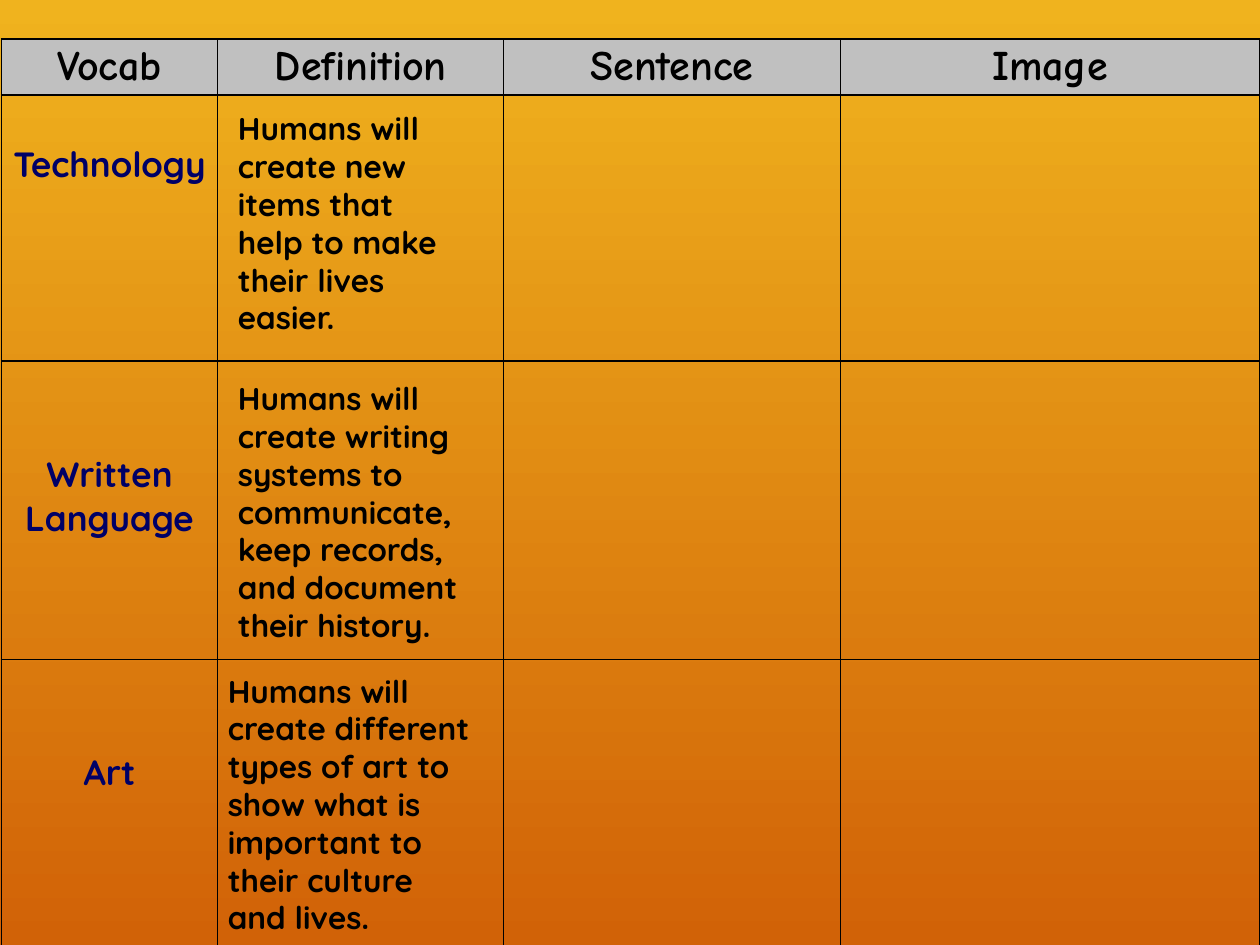
"""Build a vocabulary slide with a four-column table and three definitions."""
from dataclasses import dataclass

from lxml.etree import SubElement
from pptx import Presentation
from pptx.dml.color import RGBColor
from pptx.enum.text import MSO_AUTO_SIZE, PP_ALIGN
from pptx.oxml.ns import qn
from pptx.slide import Slide
from pptx.table import Table, _Cell
from pptx.text.text import _Paragraph
from pptx.util import Pt

COLORS = {
    "top": "F0B31E",
    "bottom": "D16207",
    "header": "C0C0C0",
    "ink": "000000",
    "term": "000066",
}
HEADER_FORMAT = {"name": "Comic Neue", "size": Pt(24), "bold": True}
TERM_FORMAT = {"name": "Quicksand", "size": Pt(20), "bold": True}
DEFINITION_FORMAT = {"name": "Quicksand", "size": Pt(18), "bold": True}

HEADINGS = ("Vocab", "Definition", "Sentence", "Image")
COLUMN_WIDTHS = (123.8, 163.4, 192.2, 239.8)
HEADER_HEIGHT = 31.7
CELL_MARGINS = {
    "margin_left": Pt(4.3),
    "margin_right": Pt(4.3),
    "margin_top": Pt(2.2),
    "margin_bottom": Pt(2.2),
}


@dataclass(frozen=True)
class Entry:
    """A vocabulary term, its row and the box of its definition."""

    term: str
    definition: str
    row_height: float
    term_drop: float
    left: float
    top: float
    width: float
    height: float


ENTRIES = (
    Entry("Technology",
          "Humans will create new items that help to make their lives easier.",
          152, 25, 128.9, 59, 141.8, 138.2),
    Entry("Written Language",
          "Humans will create writing systems to communicate, keep records, "
          "and document their history.",
          170.6, 50, 128.9, 213.1, 153.4, 159.8),
    Entry("Art",
          "Humans will create different types of art to show what is important "
          "to their culture and lives.",
          170.6, 50, 123.1, 380.2, 153.4, 159.8),
)


def color(name: str) -> RGBColor:
    """Return a named colour."""
    return RGBColor.from_string(COLORS[name])


def apply(target: object, values: dict) -> None:
    """Set each attribute of the target from the values."""
    for name, value in values.items():
        setattr(target, name, value)


def write(para: _Paragraph, text: str, values: dict, ink: str) -> None:
    """Add one formatted span of text to a paragraph."""
    span = para.add_run()
    span.text = text
    apply(span.font, values)
    span.font.color.rgb = color(ink)


def paint_background(page: Slide) -> None:
    """Fill the page with a gradient from top to bottom."""
    fill = page.background.fill
    fill.gradient()
    fill.gradient_angle = 270
    for stop, name, position in zip(fill.gradient_stops, ("top", "bottom"), (0, 1)):
        stop.color.rgb = color(name)
        stop.position = position


def style_cell(cell: _Cell) -> None:
    """Give a cell its margins, thin borders and no fill."""
    apply(cell, CELL_MARGINS)
    properties = cell._tc.get_or_add_tcPr()
    for edge in ("a:lnL", "a:lnR", "a:lnT", "a:lnB"):
        line = SubElement(properties, qn(edge), w=str(Pt(0.75)))
        solid = SubElement(line, qn("a:solidFill"))
        SubElement(solid, qn("a:srgbClr"), val=COLORS["ink"])
    cell.fill.background()


def write_cell(cell: _Cell, text: str, values: dict, ink: str) -> None:
    """Write centred text in a cell."""
    para = cell.text_frame.paragraphs[0]
    para.alignment = PP_ALIGN.CENTER
    write(para, text, values, ink)


def add_grid(page: Slide) -> Table:
    """Add the empty bordered table."""
    heights = (HEADER_HEIGHT, *(entry.row_height for entry in ENTRIES))
    table = page.shapes.add_table(
        len(heights), len(COLUMN_WIDTHS), Pt(0.7), Pt(22.3),
        Pt(sum(COLUMN_WIDTHS)), Pt(sum(heights)),
    ).table
    apply(table, {"first_row": False, "horz_banding": False})
    for column, width in zip(table.columns, COLUMN_WIDTHS):
        column.width = Pt(width)
    for row, height in zip(table.rows, heights):
        row.height = Pt(height)
    for cell in table.iter_cells():
        style_cell(cell)
    return table


def add_definition(page: Slide, entry: Entry) -> None:
    """Add the text box with the definition of an entry."""
    box = page.shapes.add_textbox(
        Pt(entry.left), Pt(entry.top), Pt(entry.width), Pt(entry.height))
    apply(box.text_frame, {"word_wrap": True,
                           "auto_size": MSO_AUTO_SIZE.SHAPE_TO_FIT_TEXT})
    write(box.text_frame.paragraphs[0], entry.definition, DEFINITION_FORMAT, "ink")


def main() -> None:
    """Build and save the deck."""
    deck = Presentation()
    apply(deck, {"slide_width": Pt(720), "slide_height": Pt(540)})
    page = deck.slides.add_slide(deck.slide_layouts[6])
    paint_background(page)
    table = add_grid(page)
    for column, heading in enumerate(HEADINGS):
        cell = table.cell(0, column)
        cell.fill.solid()
        cell.fill.fore_color.rgb = color("header")
        write_cell(cell, heading, HEADER_FORMAT, "ink")
    for row, entry in enumerate(ENTRIES, start=1):
        cell = table.cell(row, 0)
        cell.margin_top += Pt(entry.term_drop)
        write_cell(cell, entry.term, TERM_FORMAT, "term")
        add_definition(page, entry)
    deck.save("out.pptx")


if __name__ == "__main__":
    main()
